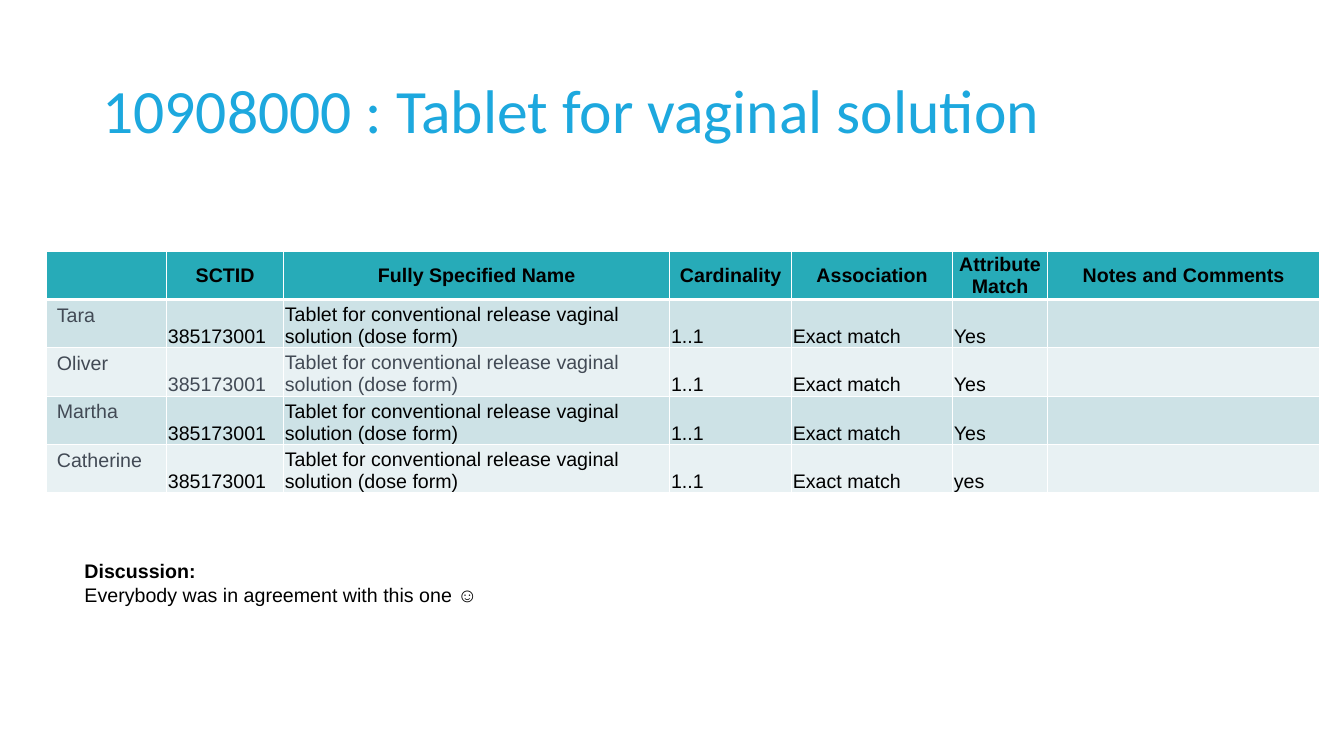
import pptx
import pptx.dml.color
import pptx.enum.text
import pptx.oxml
import pptx.oxml.ns
import pptx.util
from dataclasses import dataclass
from lxml import etree

Cm = pptx.util.Cm
Anchor = pptx.enum.text.MSO_ANCHOR
Align = pptx.enum.text.PP_ALIGN

# Content
TITLE = "10908000 : Tablet for vaginal solution"
HEADERS = ["", "SCTID", "Fully Specified Name", "Cardinality",
           "Association", "Attribute Match", "Notes and Comments"]
CODE = "385173001"
DOSE_FORM = "Tablet for conventional release vaginal solution (dose form)"
REVIEWS = [(name, CODE, DOSE_FORM, "1..1", "Exact match", match, "")
           for name, match in [("Tara", "Yes"), ("Oliver", "Yes"),
                               ("Martha", "Yes"), ("Catherine", "yes")]]
MUTED_REVIEWER = "Oliver"
DISCUSSION = ["Discussion:", "Everybody was in agreement with this one ☺"]

# Layout in centimetres: left, top, width, height
SLIDE_SIZE = (33.87, 19.05)
TITLE_BOX = (2.33, 1.01, 29.21, 3.68)
DISCUSSION_BOX = (1.88, 13.97, 30.1, 2.06)
TABLE_ORIGIN = (1.18, 6.33)
COLUMN_WIDTHS = [3.02, 2.95, 9.73, 3.07, 4.06, 2.39, 6.86]
ROW_HEIGHT = 1.07
CELL_MARGIN = 0.03


@dataclass(frozen=True)
class Theme:
    title_font: str = "Calibri"
    body_font: str = "Arial"
    title_size: int = 44
    body_size: int = 14
    title: str = "1DA8DE"
    text: str = "000000"
    muted: str = "424A55"
    header: str = "27ABB8"
    bands: tuple = ("CDE2E6", "E8F1F3")
    border: str = "FFFFFF"


THEME = Theme()


def rgb(value):
    return pptx.dml.color.RGBColor.from_string(value)


def style(paragraph, color=THEME.text, bold=False,
          font=THEME.body_font, size=THEME.body_size):
    for run in paragraph.runs:
        run.font.name = font
        run.font.size = pptx.util.Pt(size)
        run.font.bold = bold
        run.font.color.rgb = rgb(color)


def add_text_box(slide, box, text):
    shape = slide.shapes.add_textbox(*map(Cm, box))
    shape.text_frame.word_wrap = True
    shape.text_frame.text = text
    return shape.text_frame


def set_borders(cell, bottom_width):
    properties = cell._tc.get_or_add_tcPr()
    widths = {"lnL": 1, "lnR": 1, "lnT": 1, "lnB": bottom_width}
    for position, (side, width) in enumerate(widths.items()):
        line = etree.Element(pptx.oxml.ns.qn(f"a:{side}"),
                             w=str(pptx.util.Pt(width)))
        fill = etree.SubElement(line, pptx.oxml.ns.qn("a:solidFill"))
        etree.SubElement(fill, pptx.oxml.ns.qn("a:srgbClr"), val=THEME.border)
        properties.insert(position, line)


def fill_cell(cell, text, row, column, reviewer):
    is_header = row == 0
    cell.fill.solid()
    cell.fill.fore_color.rgb = rgb(
        THEME.header if is_header else THEME.bands[(row - 1) % 2])
    set_borders(cell, 3 if is_header or row == 1 and False else 1)
    if not text:
        return
    cell.text = text
    paragraph = cell.text_frame.paragraphs[0]
    if is_header or column > 0:
        cell.margin_left = cell.margin_top = cell.margin_right = Cm(CELL_MARGIN)
        cell.margin_bottom = 0
        cell.vertical_anchor = Anchor.MIDDLE if is_header else Anchor.BOTTOM
    if is_header:
        paragraph.alignment = Align.CENTER
    muted = not is_header and (
        column == 0 or reviewer == MUTED_REVIEWER and column < 3)
    style(paragraph, THEME.muted if muted else THEME.text, bold=is_header)


def add_review_table(slide):
    rows = [HEADERS, *REVIEWS]
    size = (sum(COLUMN_WIDTHS), ROW_HEIGHT * len(rows))
    table = slide.shapes.add_table(
        len(rows), len(HEADERS), *map(Cm, TABLE_ORIGIN + size)).table
    for column, width in zip(table.columns, COLUMN_WIDTHS):
        column.width = Cm(width)
    for row_index, values in enumerate(rows):
        table.rows[row_index].height = Cm(ROW_HEIGHT)
        for column_index, text in enumerate(values):
            fill_cell(table.cell(row_index, column_index), text,
                      row_index, column_index, values[0])
    # The header rule is shared with the first review row
    for column_index in range(len(HEADERS)):
        top = table.cell(1, column_index)._tc.tcPr.find(pptx.oxml.ns.qn("a:lnT"))
        top.set("w", str(pptx.util.Pt(3)))


def main():
    presentation = pptx.Presentation()
    presentation.slide_width, presentation.slide_height = map(Cm, SLIDE_SIZE)
    slide = presentation.slides.add_slide(presentation.slide_layouts[6])

    # Title
    title_frame = add_text_box(slide, TITLE_BOX, TITLE)
    title_frame.vertical_anchor = Anchor.MIDDLE
    title_frame.paragraphs[0].line_spacing = 0.9
    style(title_frame.paragraphs[0], THEME.title,
          font=THEME.title_font, size=THEME.title_size)

    # Review table
    add_review_table(slide)

    # Discussion
    discussion_frame = add_text_box(slide, DISCUSSION_BOX, "\n".join(DISCUSSION))
    for index, paragraph in enumerate(discussion_frame.paragraphs):
        style(paragraph, bold=index == 0)

    presentation.save("out.pptx")


if __name__ == "__main__":
    main()
